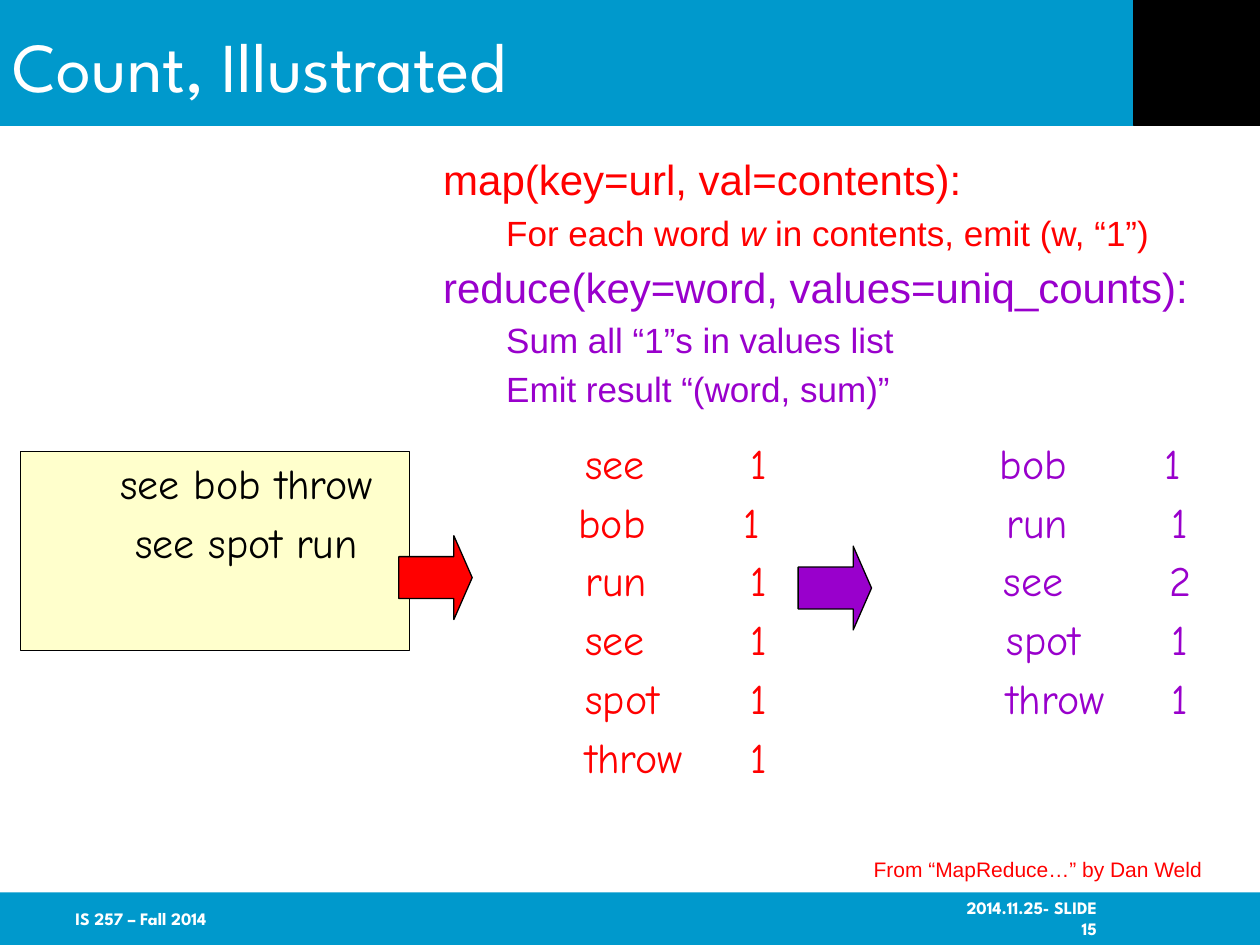
from dataclasses import dataclass

from lxml.etree import SubElement
from pptx import Presentation
from pptx.dml.color import RGBColor
from pptx.enum.shapes import MSO_SHAPE as Preset
from pptx.enum.text import MSO_ANCHOR as Anchor, MSO_AUTO_SIZE as AutoSize, PP_ALIGN as Align
from pptx.oxml.ns import qn
from pptx.util import Cm, Pt


@dataclass(frozen=True)
class Theme:
    """Colours, fonts and type sizes of the slide."""
    blue: RGBColor = RGBColor(0x00, 0x99, 0xCC)
    black: RGBColor = RGBColor(0x00, 0x00, 0x00)
    white: RGBColor = RGBColor(0xFF, 0xFF, 0xFF)
    cream: RGBColor = RGBColor(0xFF, 0xFF, 0xCC)
    map_red: RGBColor = RGBColor(0xFF, 0x00, 0x00)
    reduce_purple: RGBColor = RGBColor(0x99, 0x00, 0xCC)
    heading_font: str = "League Spartan"
    body_font: str = "Arial"
    words_font: str = "Comic Neue"
    title_size: int = 40
    large: int = 24
    medium: int = 20
    credit: int = 12
    footer: int = 10


THEME = Theme()
INDENTS = {1: (2.06, -0.79), 2: (3.18, -0.64)}
TAB_WIDTH = 2.54
GAP_SHARE = 0.2


def style_font(font, name, size, color, bold=False):
    """Set the face, size, colour and weight of a font."""
    font.name, font.size, font.bold = name, Pt(size), bold
    font.color.rgb = color


def indent_paragraph(paragraph, level, size, is_first):
    """Give a paragraph its level, hanging indent, tab width and space before, without a bullet."""
    paragraph.level = level
    paragraph.space_before = Pt(0 if is_first else GAP_SHARE * size)
    properties = paragraph._p.get_or_add_pPr()
    margin, hanging = INDENTS[level]
    properties.set("marL", str(Cm(margin)))
    properties.set("indent", str(Cm(hanging)))
    properties.set("defTabSz", str(Cm(TAB_WIDTH)))
    SubElement(properties, qn("a:buNone"))


def add_paragraphs(frame, count):
    """Return the first paragraph of a frame followed by new ones."""
    return [frame.paragraphs[0]] + [frame.add_paragraph() for _ in range(count - 1)]


def place(shape, left, top, width, height):
    """Move and size a shape, in centimetres."""
    shape.left, shape.top, shape.width, shape.height = map(Cm, (left, top, width, height))


def add_filled(slide, preset, box, fill, outlined=True):
    """Add a flat preset shape with an optional thin black outline."""
    shape = slide.shapes.add_shape(preset, *map(Cm, box))
    shape.shadow.inherit = False
    shape.fill.solid()
    shape.fill.fore_color.rgb = fill
    if outlined:
        shape.line.color.rgb = THEME.black
        shape.line.width = Pt(0.75)
    else:
        shape.line.fill.background()
    return shape


def add_bands(slide):
    """Put the header, footer and corner blocks behind the placeholders."""
    bands = [
        ((0, 0, 25.4, 2.54), THEME.blue, False),
        ((0, 17.99, 25.4, 1.06), THEME.blue, False),
        ((22.86, 0, 2.54, 2.53), THEME.black, True),
    ]
    for box, fill, outlined in bands:
        band = add_filled(slide, Preset.RECTANGLE, box, fill, outlined)
        slide.shapes.title.element.addprevious(band.element)


def fill_title(title, text):
    """Set the title in the header band."""
    place(title, 0, 0.05, 22.86, 2.49)
    frame = title.text_frame
    frame.text = text
    frame.vertical_anchor = Anchor.MIDDLE
    frame.auto_size = AutoSize.NONE
    paragraph = frame.paragraphs[0]
    paragraph.alignment = Align.LEFT
    style_font(paragraph.font, THEME.heading_font, THEME.title_size, THEME.white)


def fill_body(body, lines):
    """Write the pseudocode, with every second part of a line in italics."""
    place(body, 7.41, 2.97, 17.58, 5.72)
    frame = body.text_frame
    frame.auto_size = AutoSize.NONE
    frame.margin_bottom = 0
    for index, (paragraph, line) in enumerate(zip(add_paragraphs(frame, len(lines)), lines)):
        level, color, parts = line
        size = THEME.large if level == 1 else THEME.medium
        indent_paragraph(paragraph, level, size, index == 0)
        style_font(paragraph.font, THEME.body_font, size, color)
        for position, part in enumerate(parts):
            run = paragraph.add_run()
            run.text = part
            if position % 2:
                run.font.italic = True


def write_words(shape, lines, color):
    """Write centred word lines into a shape."""
    frame = shape.text_frame
    frame.word_wrap = True
    frame.vertical_anchor = Anchor.TOP
    for index, (paragraph, line) in enumerate(zip(add_paragraphs(frame, len(lines)), lines)):
        paragraph.text = line
        paragraph.alignment = Align.CENTER
        indent_paragraph(paragraph, 1, THEME.large, index == 0)
        style_font(paragraph.font, THEME.words_font, THEME.large, color)


def add_word_counts(slide, left, lines, color):
    """Add a column of words and their counts."""
    box = slide.shapes.add_textbox(Cm(left), Cm(8.69), Cm(7.82), Cm(4.01))
    write_words(box, lines, color)


def add_arrow(slide, left, top, fill):
    """Add a block arrow between two stages."""
    arrow = add_filled(slide, Preset.RIGHT_ARROW, (left, top, 1.48, 1.69), fill)
    arrow.adjustments[0], arrow.adjustments[1] = 0.5, 0.25


def add_footer(slide, left, text, alignment, anchor, right_inset=0):
    """Add a bold label in the footer band."""
    frame = slide.shapes.add_textbox(Cm(left), Cm(17.99), Cm(5.28), Cm(1.06)).text_frame
    frame.word_wrap = True
    frame.vertical_anchor = anchor
    frame.margin_right = Cm(right_inset)
    paragraph = frame.paragraphs[0]
    paragraph.text = text
    paragraph.alignment = alignment
    style_font(paragraph.font, THEME.heading_font, THEME.footer, THEME.white, bold=True)


def add_credit(slide, text):
    """Add the credit line above the footer band."""
    frame = slide.shapes.add_textbox(Cm(17.32), Cm(17.15), Cm(7.21), Cm(0.76)).text_frame
    frame.word_wrap = False
    frame.auto_size = AutoSize.SHAPE_TO_FIT_TEXT
    paragraph = frame.paragraphs[0]
    paragraph.text = text
    paragraph.alignment = Align.CENTER
    style_font(paragraph.font, THEME.body_font, THEME.credit, THEME.map_red)


def main():
    """Build and save the slide."""
    presentation = Presentation()
    presentation.slide_width, presentation.slide_height = Cm(25.4), Cm(19.05)
    slide = presentation.slides.add_slide(presentation.slide_layouts[1])
    red, purple = THEME.map_red, THEME.reduce_purple
    add_bands(slide)
    add_footer(slide, 18.85, "2014.11.25- SLIDE 15", Align.RIGHT, Anchor.BOTTOM, 2.02)
    fill_title(slide.shapes.title, "Count, Illustrated")
    fill_body(slide.placeholders[1], [
        (1, red, ["map(key=url, val=contents):"]),
        (2, red, ["For each word ", "w", " in contents, emit (w, “1”)"]),
        (1, purple, ["reduce(key=word, values=uniq_counts):"]),
        (2, purple, ["Sum all “1”s in values list"]),
        (2, purple, ["Emit result “(word, sum)”"]),
    ])
    document = add_filled(slide, Preset.RECTANGLE, (0.42, 9.1, 7.83, 4.02), THEME.cream)
    write_words(document, ["see bob throw", "see spot run"], THEME.black)
    add_word_counts(slide, 9.09, ["see\t1", "bob\t1 ", "run\t1", "see \t1", "spot \t1", "throw\t1"], red)
    add_word_counts(slide, 17.58, ["bob\t1 ", "run\t1", "see \t2", "spot \t1", "throw\t1"], purple)
    add_arrow(slide, 8.04, 10.8, red)
    add_arrow(slide, 16.09, 11.01, purple)
    add_credit(slide, "From “MapReduce…” by Dan Weld")
    add_footer(slide, 1.27, "IS 257 – Fall 2014", Align.LEFT, Anchor.MIDDLE)
    presentation.save("out.pptx")


if __name__ == "__main__":
    main()
